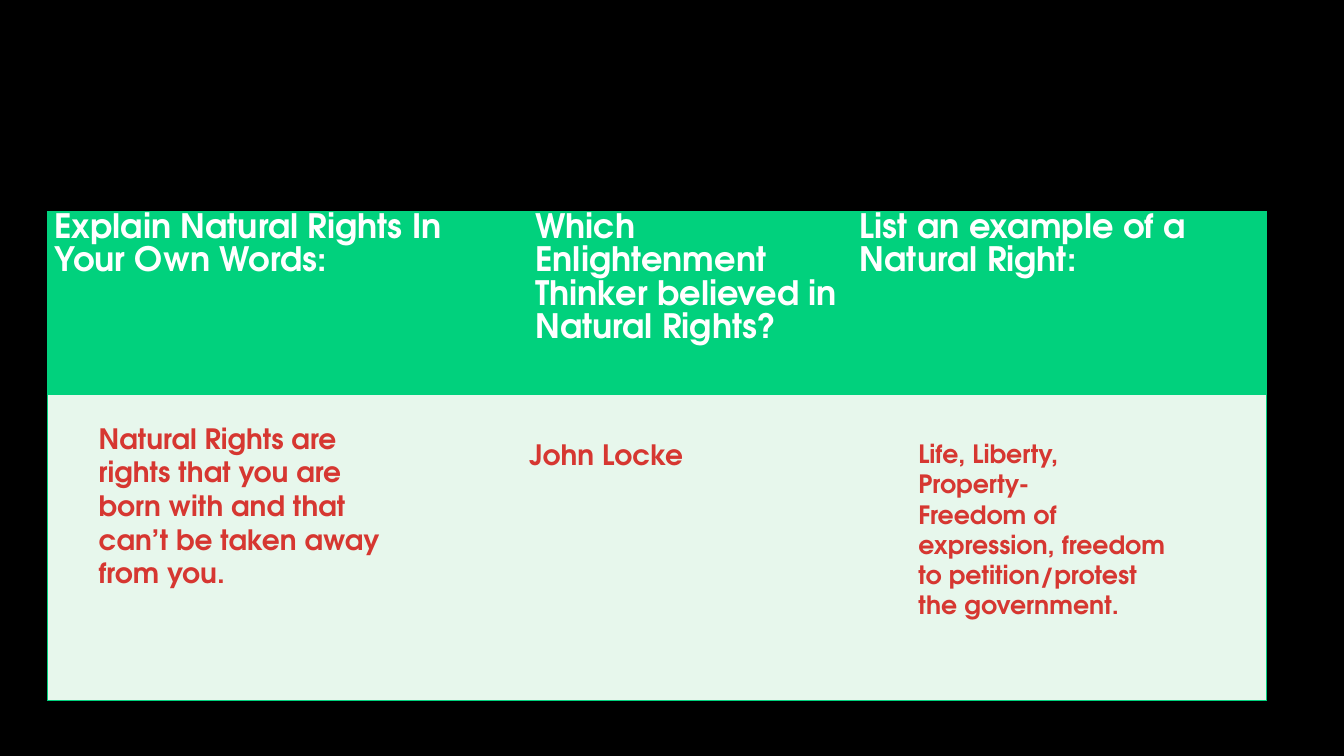
"""Build the Natural Rights question-and-answer slide."""
from dataclasses import dataclass

import pptx
import pptx.dml.color
import pptx.enum.text
import pptx.oxml
import pptx.oxml.ns
import pptx.presentation
import pptx.slide
import pptx.table
import pptx.text.text
import pptx.util

Inches = pptx.util.Inches


@dataclass(frozen=True)
class Theme:
    font: str = "TeX Gyre Adventor"
    background: str = "000000"
    header: str = "01D17D"
    body: str = "E7F7EC"
    header_text: str = "FFFFFF"
    answer_text: str = "D63731"
    header_size: int = 24
    answer_size: int = 20
    small_size: int = 18
    loose_spacing: float = 1.07


@dataclass(frozen=True)
class Column:
    question: str
    width: float


@dataclass(frozen=True)
class Answer:
    lines: tuple[str, ...]
    left: float
    top: float
    width: float
    height: float
    size: int
    spacing: float | None = None


THEME = Theme()
ROW_HEIGHTS = (1.81, 3.04)
COLUMNS = (
    Column("Explain Natural Rights In Your Own Words:", 4.77),
    Column("Which Enlightenment Thinker believed in Natural Rights?", 3.22),
    Column("List an example of a Natural Right:", 4.1),
)
ANSWERS = (
    Answer(
        ("Natural Rights are rights that you are born with and that can’t be taken away from you.",),
        0.88, 4.13, 3.29, 2.46, THEME.answer_size,
    ),
    Answer(("John Locke",), 5.15, 4.27, 3.29, 1.13, THEME.answer_size, THEME.loose_spacing),
    Answer(
        (
            "Life, Liberty, Property-",
            "Freedom of expression, freedom to petition/protest the government.",
        ),
        9.01, 4.3, 2.69, 2.22, THEME.small_size,
    ),
)


def rgb(value: str) -> pptx.dml.color.RGBColor:
    return pptx.dml.color.RGBColor.from_string(value)


def write_paragraph(
    paragraph: pptx.text.text._Paragraph, text: str, size: int, color: str, spacing: float | None
) -> None:
    run = paragraph.add_run()
    run.text = text
    font_format = {"name": THEME.font, "size": pptx.util.Pt(size), "bold": True}
    for name, value in font_format.items():
        setattr(run.font, name, value)
    run.font.color.rgb = rgb(color)
    if spacing is not None:
        paragraph.line_spacing = spacing


def set_borders(cell: pptx.table._Cell, column_index: int) -> None:
    visible = {
        "lnL": column_index == 0,
        "lnR": column_index == len(COLUMNS) - 1,
        "lnT": True,
        "lnB": True,
    }
    properties = cell._tc.get_or_add_tcPr()
    for tag, shown in visible.items():
        fill = (
            f'<a:solidFill><a:srgbClr val="{THEME.header}"/></a:solidFill>'
            if shown
            else "<a:noFill/>"
        )
        properties.append(
            pptx.oxml.parse_xml(
                f'<a:{tag} {pptx.oxml.ns.nsdecls("a")} w="{pptx.util.Pt(1)}">{fill}</a:{tag}>'
            )
        )


def add_question_table(slide: pptx.slide.Slide) -> None:
    table_width = sum(column.width for column in COLUMNS)
    table = slide.shapes.add_table(
        len(ROW_HEIGHTS), len(COLUMNS),
        Inches(0.47), Inches(2.1), Inches(table_width), Inches(sum(ROW_HEIGHTS)),
    ).table
    for row, height in zip(table.rows, ROW_HEIGHTS):
        row.height = Inches(height)
    cell_format = {
        "margin_left": Inches(0.07),
        "margin_right": Inches(0.07),
        "margin_top": 0,
        "margin_bottom": 0,
    }
    for column_index, column in enumerate(COLUMNS):
        table.columns[column_index].width = Inches(column.width)
        for row_index, color in enumerate((THEME.header, THEME.body)):
            cell = table.cell(row_index, column_index)
            for name, value in cell_format.items():
                setattr(cell, name, value)
            set_borders(cell, column_index)
            cell.fill.solid()
            cell.fill.fore_color.rgb = rgb(color)
        write_paragraph(
            table.cell(0, column_index).text_frame.paragraphs[0],
            column.question, THEME.header_size, THEME.header_text, THEME.loose_spacing,
        )


def add_answer(slide: pptx.slide.Slide, answer: Answer) -> None:
    shape = slide.shapes.add_textbox(
        Inches(answer.left), Inches(answer.top), Inches(answer.width), Inches(answer.height)
    )
    frame = shape.text_frame
    frame_format = {
        "word_wrap": True,
        "auto_size": pptx.enum.text.MSO_AUTO_SIZE.SHAPE_TO_FIT_TEXT,
    }
    for name, value in frame_format.items():
        setattr(frame, name, value)
    for index, line in enumerate(answer.lines):
        paragraph = frame.add_paragraph() if index else frame.paragraphs[0]
        write_paragraph(paragraph, line, answer.size, THEME.answer_text, answer.spacing)


def main() -> None:
    presentation = pptx.Presentation()
    presentation.slide_width = Inches(13.33)
    presentation.slide_height = Inches(7.5)
    slide = presentation.slides.add_slide(presentation.slide_layouts.get_by_name("Blank"))
    slide.background.fill.solid()
    slide.background.fill.fore_color.rgb = rgb(THEME.background)
    add_question_table(slide)
    for answer in ANSWERS:
        add_answer(slide, answer)
    presentation.save("out.pptx")


if __name__ == "__main__":
    main()
